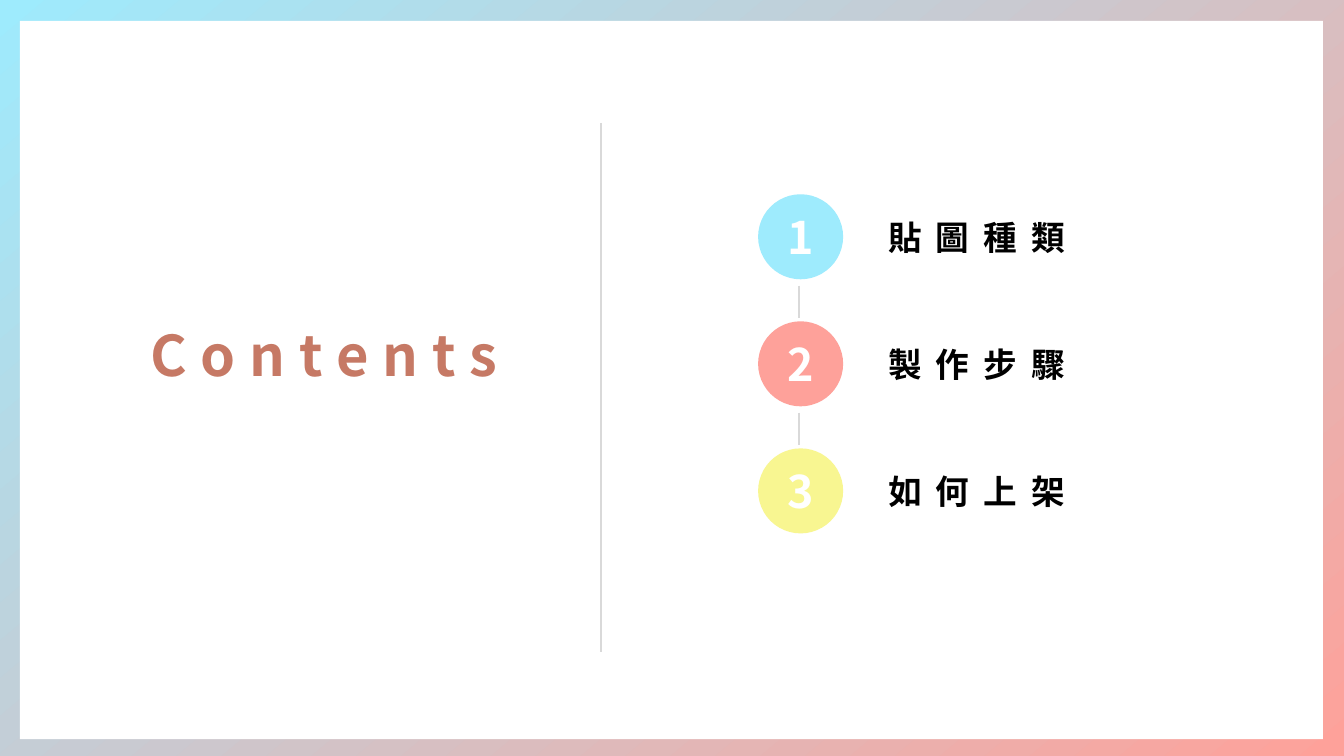
from lxml.etree import SubElement
from pptx import Presentation
from pptx.dml.color import RGBColor
from pptx.enum.shapes import MSO_CONNECTOR as Connector, MSO_SHAPE as Shape
from pptx.enum.text import MSO_ANCHOR as Anchor, PP_ALIGN as Align
from pptx.oxml.ns import qn
from pptx.util import Pt

PX = 9525
FONT = "Noto Sans CJK SC"
COLORS = {
    "sky": "9EEBFD",
    "coral": "FEA19A",
    "lemon": "F8F691",
    "clay": "C67965",
    "rule": "D9D9D9",
    "white": "FFFFFF",
    "black": "000000",
}
TOPICS = [("貼圖種類", "sky"), ("製作步驟", "coral"), ("如何上架", "lemon")]
FIRST_TOP, PITCH, DIAMETER = 185, 121, 81


def px(*lengths):
    return [length * PX for length in lengths]


def rgb(name):
    return RGBColor.from_string(COLORS[name])


def write(box, text, size, color, align=Align.LEFT, spacing=0, inset=(0, 0)):
    frame = box.text_frame
    frame.word_wrap = False
    frame.vertical_anchor = Anchor.MIDDLE
    frame.margin_left = frame.margin_right = inset[0] * PX
    frame.margin_top = frame.margin_bottom = inset[1] * PX
    para = frame.paragraphs[0]
    para.alignment = align
    span = para.add_run()
    span.text = text
    span.font.size = Pt(size)
    span.font.bold = True
    span.font.color.rgb = rgb(color)
    span.font.name = FONT
    properties = span._r.get_or_add_rPr()
    properties.set("spc", str(spacing * 100))
    SubElement(properties, qn("a:ea")).set("typeface", FONT)


def paint_background(page):
    fill = page.background.fill
    fill.gradient()
    fill.gradient_angle = 310
    for stop, color, position in zip(fill.gradient_stops, ("sky", "coral"), (0, 1)):
        stop.color.rgb = rgb(color)
        stop.position = position


def add_solid(page, kind, color, *bounds):
    solid = page.shapes.add_shape(kind, *px(*bounds))
    solid.shadow.inherit = False
    solid.fill.solid()
    solid.fill.fore_color.rgb = rgb(color)
    solid.line.fill.background()
    return solid


def add_rule(page, x, top, bottom):
    rule = page.shapes.add_connector(Connector.STRAIGHT, *px(x, top, x, bottom))
    rule.line.color.rgb = rgb("rule")
    rule.line.width = Pt(1.5)
    SubElement(rule._element.spPr, qn("a:effectLst"))


def add_title(page, text):
    title = page.shapes.title
    title.left, title.top, title.width, title.height = px(133, 300, 363, 74)
    write(title, text, 40, "clay", spacing=10, inset=(10, 5))


def add_topic(page, number, label, color):
    top = FIRST_TOP + (number - 1) * PITCH
    badge = add_solid(page, Shape.OVAL, color, 722, top, DIAMETER, DIAMETER)
    write(badge, str(number), 32, "white", align=Align.CENTER)
    box = page.shapes.add_textbox(*px(836, top + 17, 203, 48))
    write(box, label, 24, "black", spacing=10, inset=(10, 5))
    if number < len(TOPICS):
        add_rule(page, 761, top + 87, top + 118)


def main():
    """Build the contents slide."""
    deck = Presentation()
    deck.slide_width, deck.slide_height = px(1280, 720)
    page = deck.slides.add_slide(deck.slide_layouts[5])
    paint_background(page)
    card = add_solid(page, Shape.RECTANGLE, "white", 19, 20, 1241, 684)
    page.shapes.title._element.addprevious(card._element)
    add_title(page, "Contents")
    add_rule(page, 572, 117, 621)
    for number, (label, color) in enumerate(TOPICS, 1):
        add_topic(page, number, label, color)
    deck.save("out.pptx")


if __name__ == "__main__":
    main()
